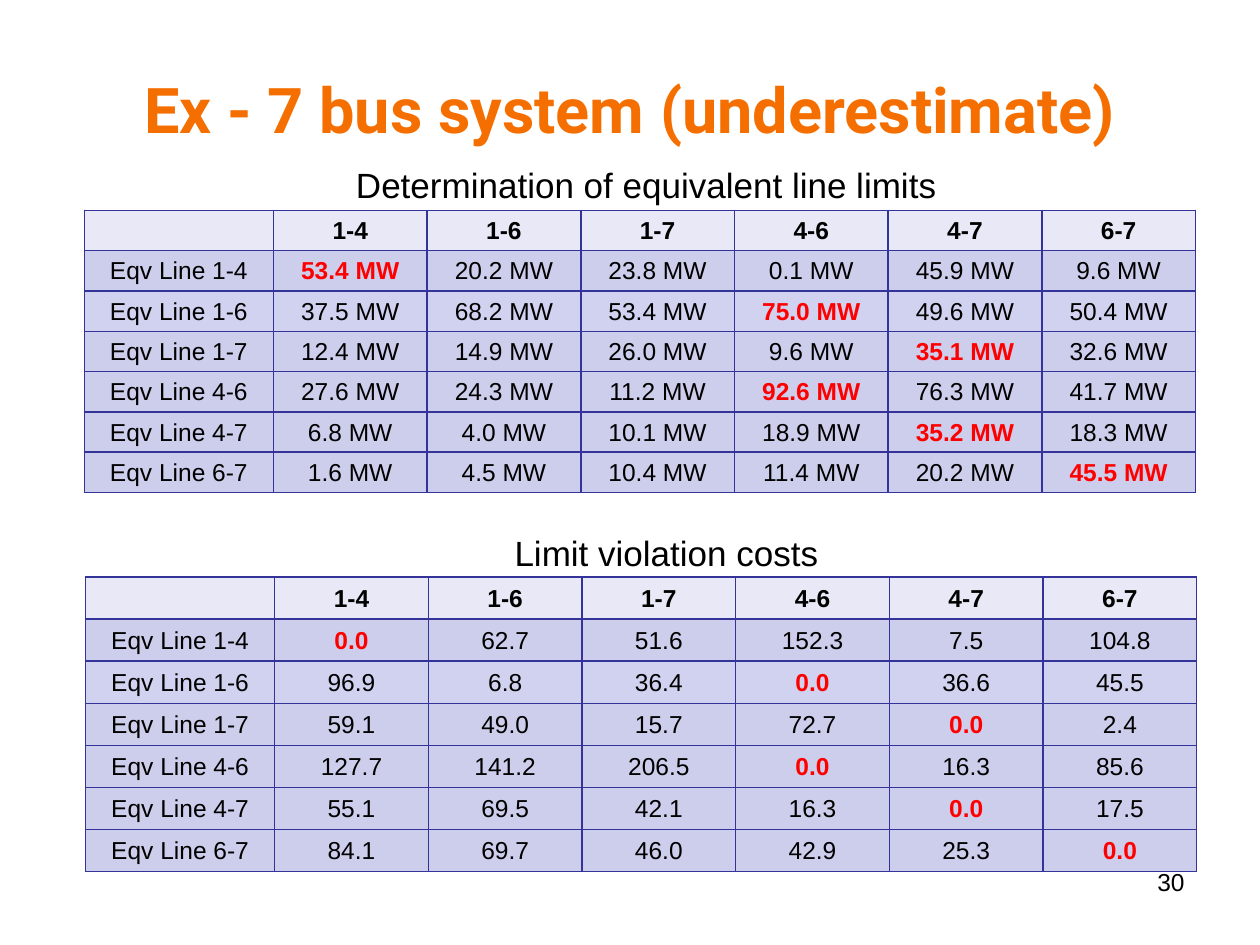
from lxml import etree
from pptx import Presentation
from pptx.dml.color import RGBColor
from pptx.enum.text import MSO_ANCHOR, PP_ALIGN
from pptx.oxml.ns import qn
from pptx.util import Inches, Pt

CENTER = PP_ALIGN.CENTER
RIGHT = PP_ALIGN.RIGHT
MIDDLE = MSO_ANCHOR.MIDDLE
COLORS = {
    "title": "F56F00",
    "text": "000000",
    "highlight": "FF0000",
    "border": "333399",
    "header": "E8E8F6",
    "band": "CDCDEC",
    "light_band": "D1D1F0",
}
LINES = ["1-4", "1-6", "1-7", "4-6", "4-7", "6-7"]
HIGHLIGHT_COLUMNS = [1, 4, 5, 4, 5, 6]
LABEL_WIDTH = 1.5
VALUE_WIDTH = 1.22

LIMITS = [
    ["53.4", "20.2", "23.8", "0.1", "45.9", "9.6"],
    ["37.5", "68.2", "53.4", "75.0", "49.6", "50.4"],
    ["12.4", "14.9", "26.0", "9.6", "35.1", "32.6"],
    ["27.6", "24.3", "11.2", "92.6", "76.3", "41.7"],
    ["6.8", "4.0", "10.1", "18.9", "35.2", "18.3"],
    ["1.6", "4.5", "10.4", "11.4", "20.2", "45.5"],
]
COSTS = [
    ["0.0", "62.7", "51.6", "152.3", "7.5", "104.8"],
    ["96.9", "6.8", "36.4", "0.0", "36.6", "45.5"],
    ["59.1", "49.0", "15.7", "72.7", "0.0", "2.4"],
    ["127.7", "141.2", "206.5", "0.0", "16.3", "85.6"],
    ["55.1", "69.5", "42.1", "16.3", "0.0", "17.5"],
    ["84.1", "69.7", "46.0", "42.9", "25.3", "0.0"],
]
TABLES = [
    ("Determination of equivalent line limits", 2.42, 1.25, 0.67, 1.67, 0.32, LIMITS, " MW"),
    ("Limit violation costs", 2.58, 4.17, 0.68, 4.58, 0.334, COSTS, ""),
]


def write(text_frame, text, size, color="text", bold=False, align=CENTER, font="Arial"):
    paragraph = text_frame.paragraphs[0]
    paragraph.text = text
    paragraph.alignment = align
    paragraph.font.name = font
    paragraph.font.size = Pt(size)
    paragraph.font.bold = bold
    paragraph.font.color.rgb = RGBColor.from_string(COLORS[color])


def format_cell(cell, fill):
    cell.vertical_anchor = MIDDLE
    cell.margin_left = cell.margin_right = cell.margin_top = Inches(0.01)
    cell.margin_bottom = 0
    properties = cell._tc.get_or_add_tcPr()
    for side in ("lnL", "lnR", "lnT", "lnB"):
        line = etree.SubElement(properties, qn(f"a:{side}"), w=str(Pt(1)))
        solid = etree.SubElement(line, qn("a:solidFill"))
        etree.SubElement(solid, qn("a:srgbClr"), val=COLORS["border"])
    cell.fill.solid()
    cell.fill.fore_color.rgb = RGBColor.from_string(COLORS[fill])


presentation = Presentation()
presentation.slide_width = Inches(10)
presentation.slide_height = Inches(7.5)
slide = presentation.slides.add_slide(presentation.slide_layouts[5])

title = slide.shapes.title
title.left, title.top, title.width, title.height = map(Inches, (0.5, 0.5, 9, 0.72))
title.text_frame.vertical_anchor = MIDDLE
write(title.text_frame, "Ex - 7 bus system (underestimate)", 36, "title", True, font="Roboto")

page_number = slide.shapes.add_textbox(*map(Inches, (7.17, 6.83, 2.33, 0.52)))
page_number.text_frame.word_wrap = True
write(page_number.text_frame, "30", 14, align=RIGHT)

for heading, heading_left, heading_top, left, top, row_height, values, unit in TABLES:
    caption = slide.shapes.add_textbox(*map(Inches, (heading_left, heading_top, 5.42, 0.44)))
    caption.text_frame.word_wrap = True
    write(caption.text_frame, heading, 20)

    rows = [["", *LINES]]
    for line_name, numbers in zip(LINES, values):
        rows.append([f"Eqv Line {line_name}", *(number + unit for number in numbers)])
    width = LABEL_WIDTH + VALUE_WIDTH * len(LINES)
    frame = slide.shapes.add_table(
        len(rows), len(rows[0]), Inches(left), Inches(top), Inches(width), Inches(row_height * len(rows))
    )
    table = frame.table
    for index, column in enumerate(table.columns):
        column.width = Inches(VALUE_WIDTH if index else LABEL_WIDTH)
    for row_index, row in enumerate(rows):
        fill = {0: "header", 2: "light_band"}.get(row_index, "band")
        for column_index, text in enumerate(row):
            cell = table.cell(row_index, column_index)
            format_cell(cell, fill)
            highlighted = row_index > 0 and column_index == HIGHLIGHT_COLUMNS[row_index - 1]
            color = "highlight" if highlighted else "text"
            write(cell.text_frame, text, 14, color, highlighted or row_index == 0)

presentation.save("out.pptx")
